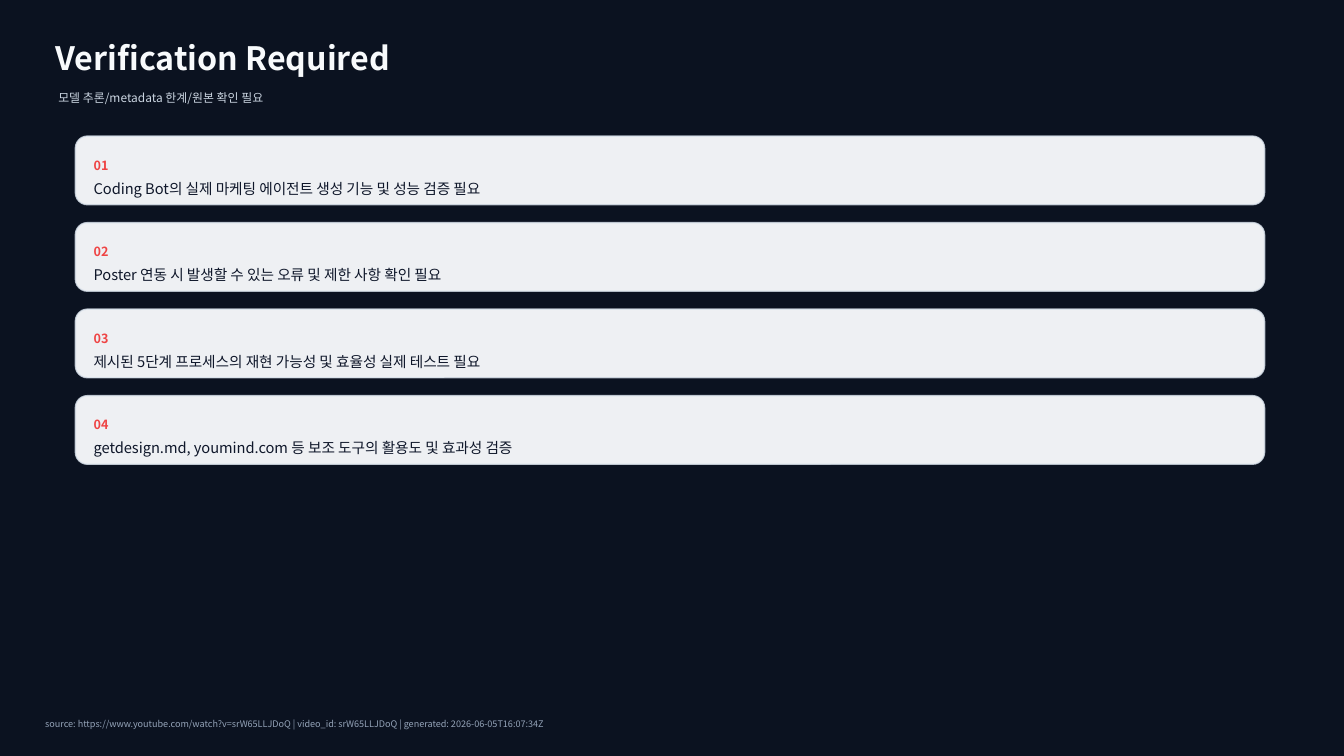
from lxml import etree
from pptx import Presentation
from pptx.dml.color import RGBColor
from pptx.enum.shapes import MSO_SHAPE
from pptx.enum.text import MSO_ANCHOR, MSO_AUTO_SIZE, PP_ALIGN
from pptx.oxml.ns import qn
from pptx.util import Cm, Pt

ROUND = MSO_SHAPE.ROUNDED_RECTANGLE
MIDDLE = MSO_ANCHOR.MIDDLE
LEFT = PP_ALIGN.LEFT
NO_FIT = MSO_AUTO_SIZE.NONE

FONT = "Noto Sans CJK KR"
COLORS = {
    "back": "0B1220",
    "light": "F8FAFC",
    "soft": "CBD5E1",
    "edge": "D7E0EA",
    "red": "EF4444",
    "ink": "0F172A",
    "mute": "94A3B8",
}
CHECKS = [
    "Coding Bot의 실제 마케팅 에이전트 생성 기능 및 성능 검증 필요",
    "Poster 연동 시 발생할 수 있는 오류 및 제한 사항 확인 필요",
    "제시된 5단계 프로세스의 재현 가능성 및 효율성 실제 테스트 필요",
    "getdesign.md, youmind.com 등 보조 도구의 활용도 및 효과성 검증",
]
SOURCE = (
    "source: https://www.youtube.com/watch?v=srW65LLJDoQ | "
    "video_id: srW65LLJDoQ | generated: 2026-06-05T16:07:34Z"
)
CARD_X, CARD_Y, CARD_W, CARD_H = 1.9, 3.43, 29.97, 1.73
STEP, PAD = 2.18, 0.46


def rgb(name):
    return RGBColor.from_string(COLORS[name])


def fade(fill, percent):
    """Set the opacity of a solid fill, in percent."""
    color = fill._xPr.find(qn("a:solidFill"))[0]
    etree.SubElement(color, qn("a:alpha"), val=str(percent * 1000))


class Deck:
    """Holds the style and the current slide."""

    def __init__(self):
        self.prs = Presentation()
        self.prs.slide_width = Cm(33.87)
        self.prs.slide_height = Cm(19.05)
        self.slide = self.prs.slides.add_slide(self.prs.slide_layouts[5])
        back = self.slide.background.fill
        back.solid()
        back.fore_color.rgb = rgb("back")

    def label(self, shape, text, size, color, bold=False):
        """Put one styled run into a shape without insets."""
        frame = shape.text_frame
        frame.word_wrap = True
        frame.auto_size = NO_FIT
        frame.vertical_anchor = MIDDLE
        frame.margin_left = frame.margin_right = 0
        frame.margin_top = frame.margin_bottom = 0
        para = frame.paragraphs[0]
        para.alignment = LEFT
        run = para.add_run()
        run.text = text
        font = run.font
        font.name, font.size, font.bold = FONT, Pt(size), bold
        font.color.rgb = rgb(color)
        etree.SubElement(font._element, qn("a:ea"), typeface=FONT)

    def title(self, text, x, y, w, h, size, color):
        shape = self.slide.shapes.title
        shape.left, shape.top = Cm(x), Cm(y)
        shape.width, shape.height = Cm(w), Cm(h)
        self.label(shape, text, size, color, True)

    def text(self, text, x, y, w, h, size, color, bold=False):
        box = self.slide.shapes.add_textbox(Cm(x), Cm(y), Cm(w), Cm(h))
        self.label(box, text, size, color, bold)

    def panel(self, x, y, w, h):
        shape = self.slide.shapes.add_shape(ROUND, Cm(x), Cm(y), Cm(w), Cm(h))
        shape.adjustments[0] = 0.176
        shape.shadow.inherit = False
        shape.fill.solid()
        shape.fill.fore_color.rgb = rgb("light")
        fade(shape.fill, 96)
        shape.line.width = Pt(1)
        shape.line.color.rgb = rgb("edge")
        fade(shape.line.fill, 80)

    def card(self, num, text, y):
        self.panel(CARD_X, y, CARD_W, CARD_H)
        x, w = CARD_X + PAD, CARD_W - 2 * PAD
        self.text(f"{num:02d}", x, y + 0.41, w, 0.64, 9, "red", True)
        self.text(text, x, y + 1.27, w, 0.1, 10.5, "ink")


def main():
    deck = Deck()
    deck.title("Verification Required", 1.4, 0.89, 30.48, 1.14, 23, "light")
    deck.text("모델 추론/metadata 한계/원본 확인 필요",
              1.47, 2.11, 29.21, 0.71, 8.5, "soft")
    for i, check in enumerate(CHECKS):
        deck.card(i + 1, check, CARD_Y + i * STEP)
    deck.text(SOURCE, 1.14, 17.91, 31.5, 0.64, 6.5, "mute")
    deck.prs.save("out.pptx")


if __name__ == "__main__":
    main()
